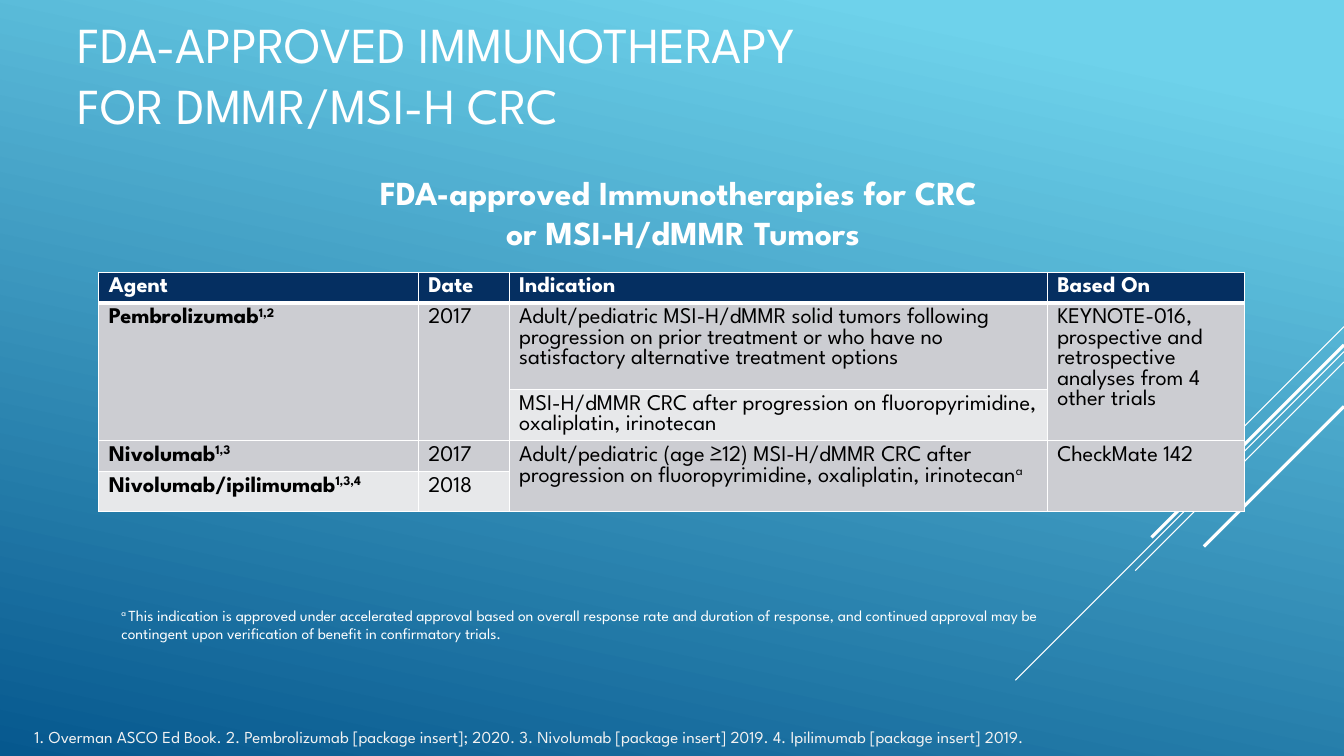
from lxml import etree
from pptx import Presentation
from pptx import util as u
from pptx.dml.color import RGBColor
from pptx.enum import shapes, text
from pptx.oxml import ns

FONT = "League Spartan"
WHITE = RGBColor(0xFF, 0xFF, 0xFF)
BLACK = RGBColor(0, 0, 0)
OFF_WHITE = RGBColor(0xF2, 0xF2, 0xF2)
NAVY = RGBColor(0x05, 0x2F, 0x61)
GREY = RGBColor(0xCC, 0xCD, 0xD2)
PALE = RGBColor(0xE7, 0xE8, 0xEA)
SKY = RGBColor(0x6E, 0xD2, 0xEB)
DEEP = RGBColor(0x06, 0x58, 0x8E)

TITLE = "FDA-APPROVED IMMUNOTHERAPY\vFOR DMMR/MSI-H CRC"
SUBTITLE = "FDA-approved Immunotherapies for CRC \vor MSI-H/dMMR Tumors"
FOOTNOTE = [
    ("a ", True),
    ("This indication is approved under accelerated approval based on overall response rate "
     "and duration of response, and continued approval may be contingent upon verification "
     "of benefit in confirmatory trials.", False),
]
REFERENCES = ("1. Overman ASCO Ed Book. 2. Pembrolizumab [package insert]; 2020. "
              "3. Nivolumab [package insert] 2019. 4. Ipilimumab [package insert] 2019.")
APPROVALS = [
    [("Agent", ""), ("Date", ""), ("Indication", ""), ("Based On", "")],
    [("Pembrolizumab", "1,2"), ("2017", ""),
     ("Adult/pediatric MSI-H/dMMR solid tumors following progression on prior treatment "
      "or who have no satisfactory alternative treatment options", ""),
     ("KEYNOTE-016, prospective and retrospective analyses from 4 other trials", "")],
    [None, None,
     ("MSI-H/dMMR CRC after progression on fluoropyrimidine, oxaliplatin, irinotecan", ""), None],
    [("Nivolumab", "1,3"), ("2017", ""),
     ("Adult/pediatric (age ≥12) MSI-H/dMMR CRC after progression on fluoropyrimidine, "
      "oxaliplatin, irinotecan", "a"),
     ("CheckMate 142", "")],
    [("Nivolumab/ipilimumab", "1,3,4"), ("2018", ""), None, None],
]
COLUMN_WIDTHS = [8.05, 2.29, 13.56, 4.98]
ROW_HEIGHTS = [0.78, 2.18, 1.28, 0.78, 1.0]
ROW_FILLS = [NAVY, GREY, PALE, GREY, PALE]
RAYS = [(8.23, 2.54, 0.75), (8.86, 8.28, 0.75), (9.12, 5.26, 0.75),
        (8.69, 4.85, 2.25), (10.24, 3.53, 2.25)]
SLIDE_WIDTH = 33.87


def style(run, size, color, bold=False, raised=False):
    run.font.name = FONT
    run.font.size = u.Pt(size)
    run.font.color.rgb = color
    run.font.bold = bold
    if raised:
        run.font._element.set("baseline", "30000")


def place(part, left, top, width, height):
    part.left, part.top = u.Cm(left), u.Cm(top)
    part.width, part.height = u.Cm(width), u.Cm(height)


def write(frame, words, size, color, align, anchor, bold=False):
    frame.text = words
    frame.word_wrap = True
    frame.auto_size = text.MSO_AUTO_SIZE.NONE
    frame.vertical_anchor = anchor
    frame.paragraphs[0].alignment = align
    for run in frame.paragraphs[0].runs:
        style(run, size, color, bold)


def write_parts(paragraph, parts, size, color, bold=False):
    for words, raised in parts:
        run = paragraph.add_run()
        run.text = words
        style(run, size, color, bold, raised)


def add_borders(cell, bottom, top):
    props = cell._tc.get_or_add_tcPr()
    for side, width in (("L", 1), ("R", 1), ("T", top), ("B", bottom)):
        edge = etree.SubElement(props, ns.qn("a:ln" + side), w=str(u.Pt(width)))
        fill = etree.SubElement(edge, ns.qn("a:solidFill"))
        etree.SubElement(fill, ns.qn("a:srgbClr"), val=str(WHITE))


def add_rays(slide):
    for top, run, weight in RAYS:
        ray = slide.shapes.add_connector(
            shapes.MSO_CONNECTOR.STRAIGHT, u.Cm(SLIDE_WIDTH), u.Cm(top),
            u.Cm(SLIDE_WIDTH - run), u.Cm(top + run))
        ray.line.color.rgb = WHITE
        ray.line.width = u.Pt(weight)
        etree.SubElement(ray._element.spPr, ns.qn("a:effectLst"))


def add_approvals(slide):
    table = slide.shapes.add_table(
        len(ROW_HEIGHTS), len(COLUMN_WIDTHS), u.Cm(2.49), u.Cm(6.86),
        u.Cm(sum(COLUMN_WIDTHS)), u.Cm(sum(ROW_HEIGHTS))).table
    for column, width in zip(table.columns, COLUMN_WIDTHS):
        column.width = u.Cm(width)
    for row, height in zip(table.rows, ROW_HEIGHTS):
        row.height = u.Cm(height)
    for r, entries in enumerate(APPROVALS):
        for c, entry in enumerate(entries):
            cell = table.cell(r, c)
            add_borders(cell, 3 if r == 0 else 1, 3 if r == 1 else 1)
            cell.fill.solid()
            cell.fill.fore_color.rgb = ROW_FILLS[r]
            if entry is None:
                table.cell(r - 1, c).merge(cell)
                continue
            words, mark = entry
            parts = [(words, False)] + ([(mark, True)] if mark else [])
            write_parts(cell.text_frame.paragraphs[0], parts, 16,
                        BLACK if r else WHITE, r == 0 or c == 0)


def main():
    deck = Presentation()
    deck.slide_width, deck.slide_height = u.Cm(SLIDE_WIDTH), u.Cm(19.05)
    slide = deck.slides.add_slide(deck.slide_layouts[1])
    backdrop = slide.background.fill
    backdrop.gradient()
    backdrop.gradient_angle = 258
    for stop, color, position in zip(backdrop.gradient_stops, (SKY, DEEP), (0.1, 1)):
        stop.color.rgb = color
        stop.position = position

    add_rays(slide)

    title, references = slide.placeholders
    left, center = text.PP_ALIGN.LEFT, text.PP_ALIGN.CENTER
    place(title, 1.7, 0, 30.48, 3.71)
    write(title.text_frame, TITLE, 36, WHITE, left, text.MSO_ANCHOR.MIDDLE)

    place(references, 0.61, 17.68, 30.2, 1.27)
    write(references.text_frame, REFERENCES, 12, OFF_WHITE, left, text.MSO_ANCHOR.BOTTOM)
    paragraph = references.text_frame.paragraphs[0]
    paragraph.space_before = u.Pt(0)
    props = paragraph._p.get_or_add_pPr()
    props.set("marL", "0")
    props.set("indent", "0")
    etree.SubElement(props, ns.qn("a:buNone"))

    add_approvals(slide)

    subtitle = slide.shapes.add_textbox(u.Cm(4.93), u.Cm(4.2), u.Cm(24.56), u.Cm(2.31))
    write(subtitle.text_frame, SUBTITLE, 24, WHITE, center, text.MSO_ANCHOR.TOP, True)

    footnote = slide.shapes.add_textbox(u.Cm(2.81), u.Cm(15.14), u.Cm(24.36), u.Cm(1.19))
    footnote.text_frame.word_wrap = True
    write_parts(footnote.text_frame.paragraphs[0], FOOTNOTE, 11, WHITE)

    deck.save("out.pptx")


if __name__ == "__main__":
    main()
